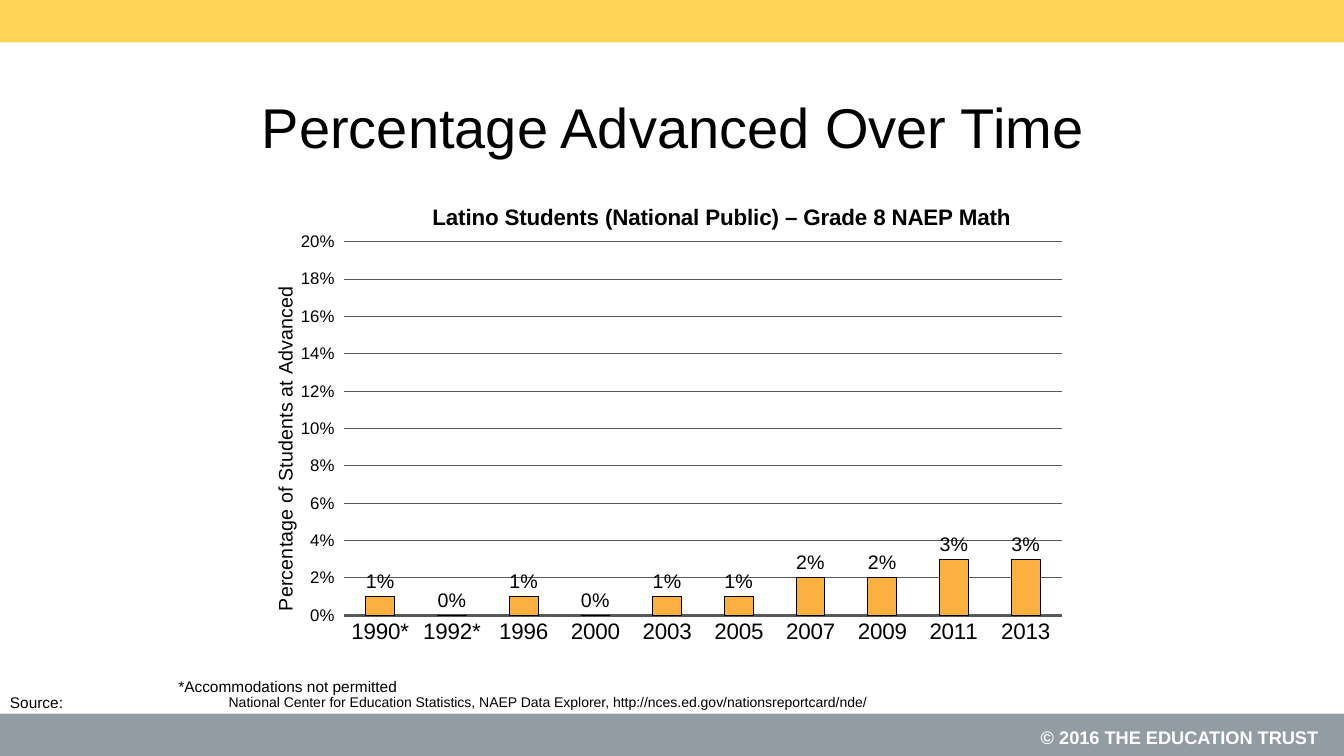
"""Build the slide on the share of Latino students at Advanced in grade 8 math."""
import pptx
import pptx.chart.data
import pptx.dml.color
import pptx.enum.chart
import pptx.enum.shapes
import pptx.enum.text
import pptx.oxml
import pptx.oxml.ns
import pptx.util
from pptx.util import Inches, Pt

COLORS = {"black": "000000", "white": "FFFFFF", "yellow": "FFD457",
          "gray": "919CA3", "bar": "FBB040", "axis": "595959"}
FONT = "Arial"
TITLE = "Percentage Advanced Over Time"
CHART_TITLE = "Latino Students (National Public) – Grade 8 NAEP Math"
AXIS_TITLE = "Percentage of Students at Advanced"
SHARES = {"1990*": 0.01, "1992*": 0, "1996": 0.01, "2000": 0, "2003": 0.01,
          "2005": 0.01, "2007": 0.02, "2009": 0.02, "2011": 0.03, "2013": 0.03}
BANDS = [(7.08, "gray"), (0, "yellow")]
COPYRIGHT = ("© 2016 THE EDUCATION TRUST", (9.06, 7.15, 4.11, 0.32), 13, "white")
SOURCE_LABEL = ("Source:", (0, 6.83, 0.89, 0.29), 11, "black")
FOOTNOTE = ("*Accommodations not permitted", (1.67, 6.67, 4.67, 0.29), 11, "black")
SOURCE = ("National Center for Education Statistics, NAEP Data Explorer, "
          "http://nces.ed.gov/nationsreportcard/nde/", (2.17, 6.83, 7.83, 0.25), 10, "black")


def rgb(name):
    return pptx.dml.color.RGBColor.from_string(COLORS[name])


def style(font, size, color="black", bold=False):
    font.name, font.size, font.bold = FONT, Pt(size), bold
    font.color.rgb = rgb(color)


def add_text(slide, text, box, size, color):
    tf = slide.shapes.add_textbox(*map(Inches, box)).text_frame
    tf.word_wrap = True
    p = tf.paragraphs[0]
    p.text = text
    style(p.runs[0].font, size, color)
    return p


def add_band(slide, top, color):
    sp = slide.shapes.add_shape(pptx.enum.shapes.MSO_SHAPE.RECTANGLE,
                                0, Inches(top), Inches(13.33), Inches(0.42))
    sp.shadow.inherit = False
    sp.fill.solid()
    sp.fill.fore_color.rgb = rgb(color)
    sp.line.fill.background()


def place(element, x, y, w=None, h=None):
    qn = pptx.oxml.ns.qn
    old = element.find(qn("c:layout"))
    if old is not None:
        element.remove(old)
    values = [("layoutTarget", "inner")] if w else []
    values += [("xMode", "edge"), ("yMode", "edge"), ("x", x), ("y", y)]
    values += [("w", w), ("h", h)] if w else []
    parts = "".join(f'<c:{tag} val="{value}"/>' for tag, value in values)
    layout = pptx.oxml.parse_xml(f'<c:layout {pptx.oxml.ns.nsdecls("c")}>'
                                 f'<c:manualLayout>{parts}</c:manualLayout></c:layout>')
    element.insert(0 if element.find(qn("c:tx")) is None else 1, layout)


def set_title(title, text, size, bold, x, y):
    tf = title.text_frame
    tf.text = text
    style(tf.paragraphs[0].runs[0].font, size, bold=bold)
    place(title._element, x, y)
    return tf


def add_chart(slide):
    enums = pptx.enum.chart
    data = pptx.chart.data.CategoryChartData(number_format="0%")
    data.categories = list(SHARES)
    data.add_series("Series 1", list(SHARES.values()))
    chart = slide.shapes.add_chart(enums.XL_CHART_TYPE.COLUMN_CLUSTERED,
                                   *map(Inches, (2.5, 1.83, 8.33, 4.87)), data).chart
    style(chart.font, 18)
    chart.has_legend = False
    chart.has_title = True
    set_title(chart.chart_title, CHART_TITLE, 16, True, 0.21, 0.03)
    place(chart._chartSpace.chart.plotArea, 0.11, 0.117, 0.854, 0.761)

    years = chart.category_axis
    years.major_tick_mark = enums.XL_TICK_MARK.NONE
    style(years.tick_labels.font, 16)
    years.format.line.color.rgb = rgb("axis")
    years.format.line.width = Pt(2.5)

    shares = chart.value_axis
    shares.minimum_scale, shares.maximum_scale, shares.major_unit = 0, 0.2, 0.02
    shares.major_tick_mark = enums.XL_TICK_MARK.OUTSIDE
    shares.format.line.fill.background()
    shares.major_gridlines.format.line.color.rgb = rgb("axis")
    shares.major_gridlines.format.line.width = Pt(0.75)
    style(shares.tick_labels.font, 12)
    shares.tick_labels.number_format = "0%"
    shares.tick_labels.number_format_is_linked = False
    tf = set_title(shares.axis_title, AXIS_TITLE, 14, False, 0.02, 0.2)
    tf._txBody.bodyPr.set("rot", "-5400000")
    tf._txBody.bodyPr.set("vert", "horz")

    plot = chart.plots[0]
    plot.gap_width = 150
    plot.vary_by_categories = False
    bars = plot.series[0]
    bars.format.fill.solid()
    bars.format.fill.fore_color.rgb = rgb("bar")
    bars.format.line.color.rgb = rgb("black")
    bars.format.line.width = Pt(0.75)
    labels = bars.data_labels
    labels.show_value = True
    labels.position = enums.XL_LABEL_POSITION.OUTSIDE_END
    labels.number_format = "0%"
    labels.number_format_is_linked = False
    style(labels.font, 14)


def main():
    prs = pptx.Presentation()
    prs.slide_width, prs.slide_height = Inches(13.33), Inches(7.5)
    slide = prs.slides.add_slide(prs.slide_layouts[5])
    for top, color in BANDS:
        add_band(slide, top, color)

    title = slide.shapes.title
    title.left, title.top, title.width, title.height = map(Inches, (0.67, 0.67, 12, 1.17))
    title.text_frame.text = TITLE
    title.text_frame.vertical_anchor = pptx.enum.text.MSO_ANCHOR.MIDDLE
    p = title.text_frame.paragraphs[0]
    p.alignment = pptx.enum.text.PP_ALIGN.CENTER
    style(p.runs[0].font, 40)

    add_chart(slide)

    p = add_text(slide, *COPYRIGHT)
    p.alignment = pptx.enum.text.PP_ALIGN.RIGHT
    p.line_spacing = Pt(16)
    p.runs[0].font.bold = True
    for note in (SOURCE_LABEL, FOOTNOTE, SOURCE):
        add_text(slide, *note)
    prs.save("out.pptx")


if __name__ == "__main__":
    main()
